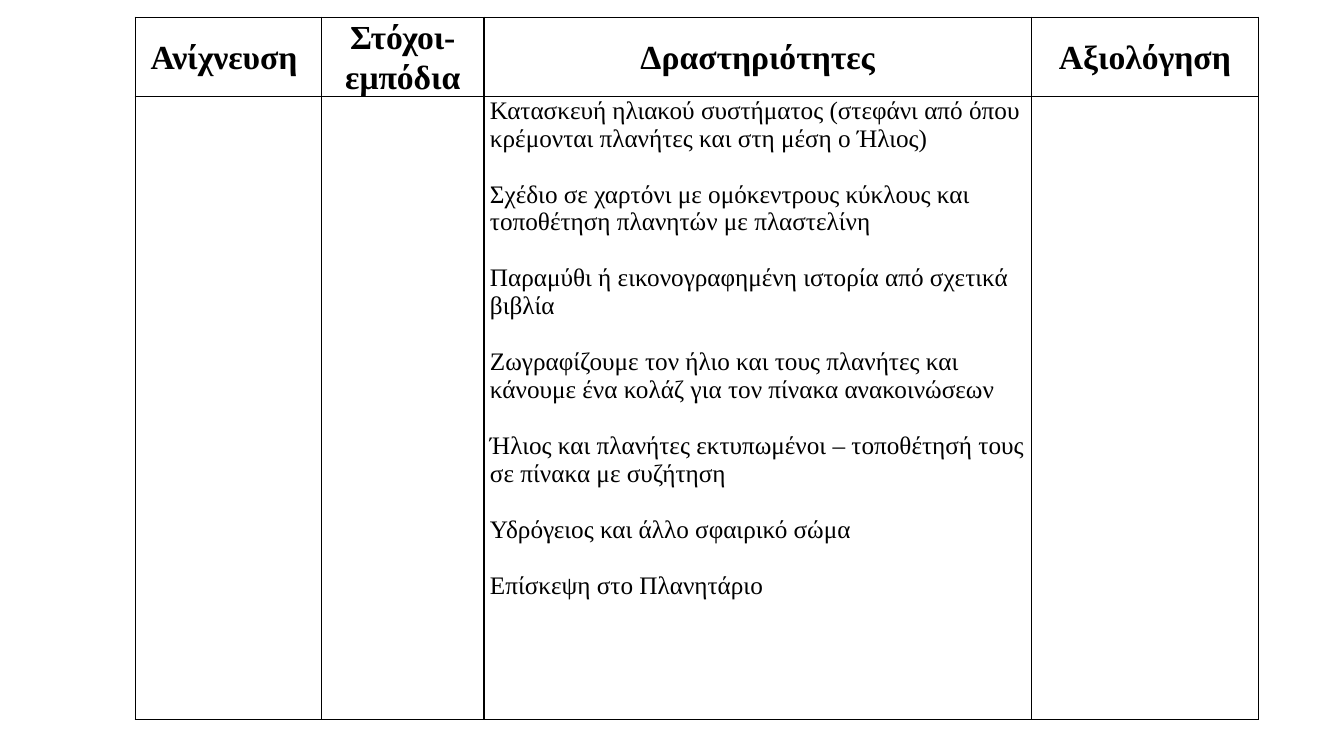
"""Build a lesson-plan table slide about the solar system."""
from dataclasses import dataclass

from lxml import etree
from pptx import Presentation
from pptx import util as u
from pptx.dml.color import RGBColor
from pptx.enum import text
from pptx.oxml import ns


@dataclass(frozen=True)
class Theme:
    font: str = "Times New Roman"
    ink: str = "000000"
    paper: str = "FFFFFF"
    head: int = 24
    body: int = 18
    gap: int = 20
    rule: int = 1


THEME = Theme()
WIDTHS = (1.85, 1.61, 5.43, 2.25)
HEIGHTS = (0.79, 6.18)
HEADS = ("Ανίχνευση ", "Στόχοι-εμπόδια", "Δραστηριότητες", "Αξιολόγηση")
TASKS = (
    "Κατασκευή ηλιακού συστήματος (στεφάνι από όπου κρέμονται πλανήτες και στη μέση ο Ήλιος)",
    "Σχέδιο σε χαρτόνι με ομόκεντρους κύκλους και τοποθέτηση πλανητών με πλαστελίνη",
    "Παραμύθι ή εικονογραφημένη ιστορία από σχετικά βιβλία",
    "Ζωγραφίζουμε τον ήλιο και τους πλανήτες και κάνουμε ένα κολάζ για τον πίνακα ανακοινώσεων",
    "Ήλιος και πλανήτες εκτυπωμένοι – τοποθέτησή τους σε πίνακα με συζήτηση",
    "Υδρόγειος και άλλο σφαιρικό σώμα",
    "Επίσκεψη στο Πλανητάριο",
)


def add_rules(cell):
    props = cell._tc.get_or_add_tcPr()
    for side in ("a:lnL", "a:lnR", "a:lnT", "a:lnB"):
        line = etree.SubElement(props, ns.qn(side), w=str(u.Pt(THEME.rule)))
        fill = etree.SubElement(line, ns.qn("a:solidFill"))
        etree.SubElement(fill, ns.qn("a:srgbClr"), val=THEME.ink)


def style_cell(cell):
    add_rules(cell)
    cell.fill.solid()
    cell.fill.fore_color.rgb = RGBColor.from_string(THEME.paper)
    cell.margin_left = cell.margin_right = u.Inches(0.06)
    cell.margin_top = cell.margin_bottom = 0


def style_font(para, size, bold):
    font = para.font
    font.name, font.size, font.bold = THEME.font, u.Pt(size), bold
    font.color.rgb = RGBColor.from_string(THEME.ink)


def fill_head(cell, label):
    cell.vertical_anchor = text.MSO_ANCHOR.MIDDLE
    para = cell.text_frame.paragraphs[0]
    para.text = label
    para.alignment = text.PP_ALIGN.CENTER
    para.line_spacing = 1.07
    style_font(para, THEME.head, True)


def fill_tasks(cell, tasks):
    cell.text = "\n".join(tasks)
    for para in cell.text_frame.paragraphs:
        para.space_after = u.Pt(THEME.gap)
        style_font(para, THEME.body, False)


def add_grid(slide):
    frame = slide.shapes.add_table(
        len(HEIGHTS), len(WIDTHS), u.Inches(1.34), u.Inches(0.17),
        u.Inches(sum(WIDTHS)), u.Inches(sum(HEIGHTS)))
    grid = frame.table
    grid.first_row = grid.horz_banding = False
    for col, width in zip(grid.columns, WIDTHS):
        col.width = u.Inches(width)
    for row, height in zip(grid.rows, HEIGHTS):
        row.height = u.Inches(height)
    for cell in grid.iter_cells():
        style_cell(cell)
    return grid


def main():
    deck = Presentation()
    deck.slide_width, deck.slide_height = u.Inches(13.33), u.Inches(7.5)
    slide = deck.slides.add_slide(deck.slide_layouts[6])
    grid = add_grid(slide)
    for col, label in enumerate(HEADS):
        fill_head(grid.cell(0, col), label)
    fill_tasks(grid.cell(1, 2), TASKS)
    deck.save("out.pptx")


if __name__ == "__main__":
    main()
